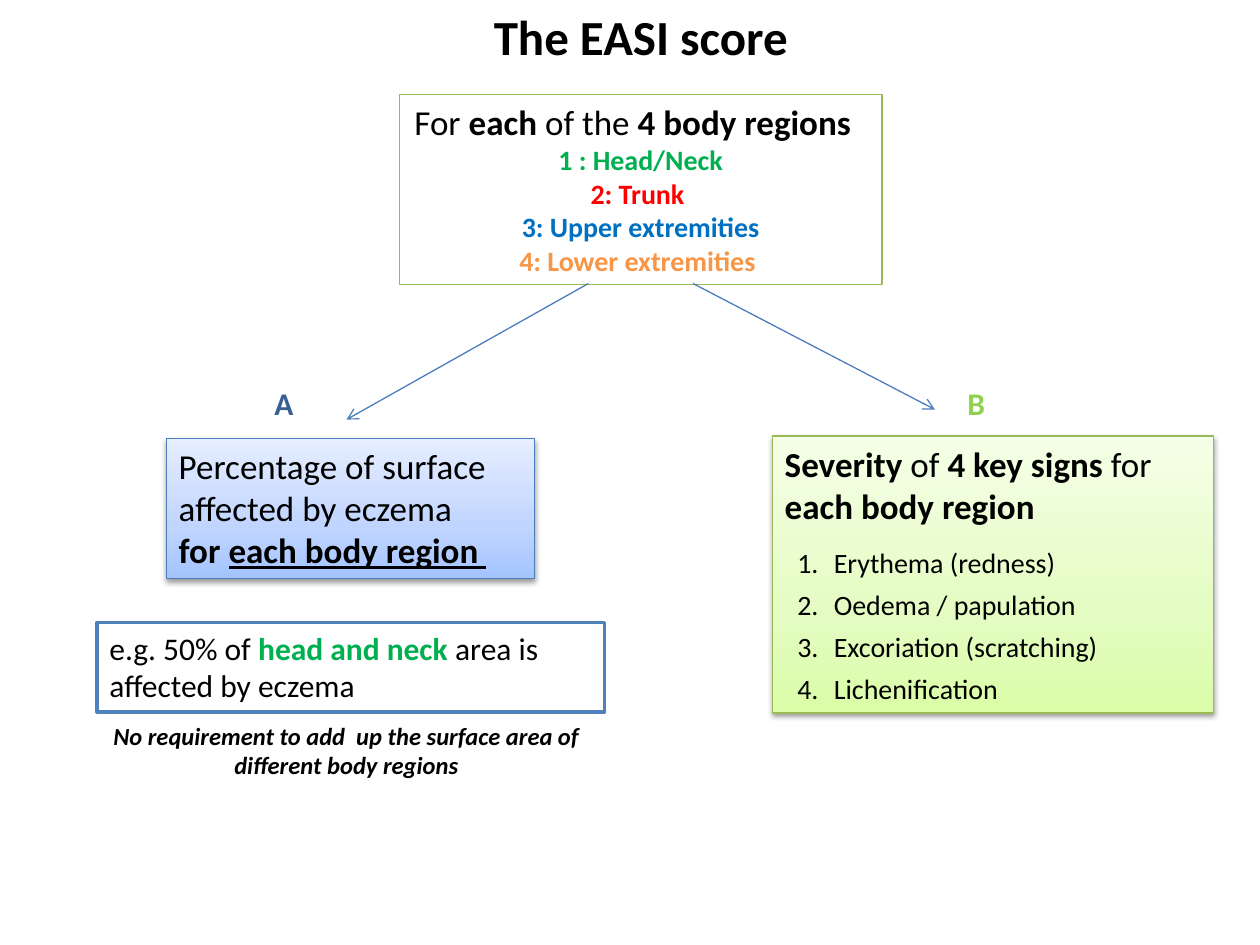
from lxml import etree
from pptx import Presentation
from pptx.dml.color import RGBColor
from pptx.enum import shapes, text
from pptx.oxml import ns
from pptx.util import Inches, Pt

BLACK = RGBColor(0, 0, 0)
WHITE = RGBColor(0xFF, 0xFF, 0xFF)
GREEN = RGBColor(0x00, 0xB0, 0x50)
RED = RGBColor(0xFF, 0, 0)
BLUE = RGBColor(0x00, 0x70, 0xC0)
ORANGE = RGBColor(0xF7, 0x96, 0x46)
NAVY = RGBColor(0x37, 0x60, 0x92)
LIME = RGBColor(0x92, 0xD0, 0x50)
EDGE = RGBColor(0x4F, 0x81, 0xBD)
STEEL = RGBColor(0x4B, 0x7E, 0xBC)
OLIVE = RGBColor(0x98, 0xB9, 0x55)
ICE = RGBColor(0xA4, 0xC4, 0xFF), RGBColor(0xBF, 0xD4, 0xFF), RGBColor(0xE6, 0xEE, 0xFF)
MINT = RGBColor(0xDA, 0xFD, 0xA7), RGBColor(0xE4, 0xFC, 0xC2), RGBColor(0xF5, 0xFF, 0xE7)

CENTER = text.PP_ALIGN.CENTER
LEFT = text.PP_ALIGN.LEFT


def sub(node, tag, **attrs):
    return etree.SubElement(node, ns.qn(tag), {k: str(v) for k, v in attrs.items()})


def write(para, words, size, bold=False, color=BLACK, italic=False, under=False):
    run = para.add_run()
    run.text = words
    font = run.font
    font.name, font.size = "Calibri", Pt(size)
    font.bold, font.italic, font.underline = bold, italic, under
    font.color.rgb = color


def setup(shape, align=LEFT):
    """Ready the text frame and return its first paragraph."""
    frame = shape.text_frame
    frame.word_wrap = True
    frame.auto_size = text.MSO_AUTO_SIZE.SHAPE_TO_FIT_TEXT
    frame.paragraphs[0].alignment = align
    return frame.paragraphs[0]


def extend(shape, align=LEFT):
    para = shape.text_frame.add_paragraph()
    para.alignment = align
    return para


def panel(slide, box, edge, width, fill=None):
    rect = slide.shapes.add_shape(shapes.MSO_SHAPE.RECTANGLE, *map(Inches, box))
    rect.shadow.inherit = False
    rect.line.color.rgb, rect.line.width = edge, Pt(width)
    if fill is None:
        rect.fill.background()
    else:
        rect.fill.solid()
        rect.fill.fore_color.rgb = fill
    rect.text_frame.vertical_anchor = text.MSO_ANCHOR.TOP
    return rect


def glow(rect, tints):
    """Give a panel a three-stop upward gradient and a soft shadow."""
    rect.fill.gradient()
    rect.fill.gradient_angle = 90
    props = rect._element.spPr
    stops = props.find(".//" + ns.qn("a:gsLst"))
    for stop in list(stops):
        stops.remove(stop)
    for place, tint in zip((0, 35, 100), tints):
        sub(sub(stops, "a:gs", pos=place * 1000), "a:srgbClr", val=tint)
    shade = sub(props.find(ns.qn("a:effectLst")), "a:outerShdw",
                blurRad=Pt(3.1), dist=Pt(1.6), dir=5400000, rotWithShape=0)
    sub(sub(shade, "a:srgbClr", val=BLACK), "a:alpha", val=38000)


def label(slide, box, words, size, color=BLACK, align=LEFT, italic=False):
    area = slide.shapes.add_textbox(*map(Inches, box))
    write(setup(area, align), words, size, True, color, italic)


def arrow(slide, start, end):
    line = slide.shapes.add_connector(
        shapes.MSO_CONNECTOR.STRAIGHT, *map(Inches, start + end))
    line.line.color.rgb, line.line.width = STEEL, Pt(0.75)
    props = line._element.spPr
    sub(props.find(ns.qn("a:ln")), "a:tailEnd", type="arrow")
    sub(props, "a:effectLst")


def heading(slide, box):
    title = slide.shapes.title
    title.left, title.top, title.width, title.height = map(Inches, box)
    title.fill.solid()
    title.fill.fore_color.rgb = WHITE
    title.line.color.rgb, title.line.width = WHITE, Pt(2)
    write(setup(title, CENTER), "The EASI score", 28, True)


def regions(slide, box):
    rect = panel(slide, box, OLIVE, 0.75)
    para = setup(rect, CENTER)
    for words, bold in (("For ", False), ("each ", True), ("of the", False),
                        (" 4 body regions   ", True)):
        write(para, words, 20, bold)
    for words, color in (("1 : Head/Neck", GREEN), ("2: Trunk ", RED),
                         ("3: Upper extremities", BLUE), ("4: Lower extremities ", ORANGE)):
        write(extend(rect, CENTER), words, 16, True, color)
    # Arrows down to both branches
    left, top, width, height = box
    base = top + height - 0.01
    arrow(slide, (left + 2.33, base), (7.42, 3.25))
    arrow(slide, (left + 1.5, base), (2.75, 3.33))


def surface(slide, box):
    left, top, width, height = box
    label(slide, (left + 0.76, top - 0.48, 1, 0.4), "A", 18, NAVY)
    rect = panel(slide, box, STEEL, 0.75)
    glow(rect, ICE)
    write(setup(rect), "Percentage of surface affected by eczema", 20)
    para = extend(rect)
    write(para, "for ", 20, True)
    write(para, "each body region ", 20, True, under=True)


def example(slide, box):
    left, top, width, height = box
    para = setup(panel(slide, box, EDGE, 2, WHITE))
    write(para, "e.g. 50% of ", 18)
    write(para, "head and neck ", 18, True, GREEN)
    write(para, "area is affected by eczema", 18)
    label(slide, (left - 0.02, top + 0.73, 4, 0.57),
          "No requirement to add  up the surface area of different body regions",
          14, align=CENTER, italic=True)


def severity(slide, box):
    left, top, width, height = box
    label(slide, (left + 1.45, top - 0.46, 1, 0.4), "B", 18, LIME)
    rect = panel(slide, box, OLIVE, 0.75)
    glow(rect, MINT)
    para = setup(rect)
    for words, bold in (("Severity", True), (" of ", False), ("4 key signs ", True),
                        ("for ", False), ("each body region", True)):
        write(para, words, 20, bold)
    # Numbered key signs
    signs = ("Erythema (redness)", "Oedema / papulation",
             "Excoriation (scratching)", "Lichenification")
    for rank, sign in enumerate(signs):
        para = extend(rect)
        props = para._p.get_or_add_pPr()
        props.set("marL", str(Inches(0.39)))
        props.set("indent", str(Inches(-0.29)))
        sub(props, "a:buFont", typeface="+mj-lt")
        sub(props, "a:buAutoNum", type="arabicPeriod")
        para.level = 1
        para.line_spacing = Pt(24)
        para.space_before = Pt(0 if rank else 6)
        write(para, sign, 16)


def main():
    deck = Presentation()
    deck.slide_width, deck.slide_height = Inches(10), Inches(7.5)
    slide = deck.slides.add_slide(deck.slide_layouts[5])
    heading(slide, (3.75, 0, 2.67, 0.57))
    surface(slide, (1.32, 3.48, 2.92, 1.11))
    severity(slide, (6.13, 3.46, 3.5, 2.2))
    example(slide, (0.77, 4.94, 4.03, 0.71))
    regions(slide, (3.17, 0.75, 3.83, 1.51))
    deck.save("out.pptx")


if __name__ == "__main__":
    main()
